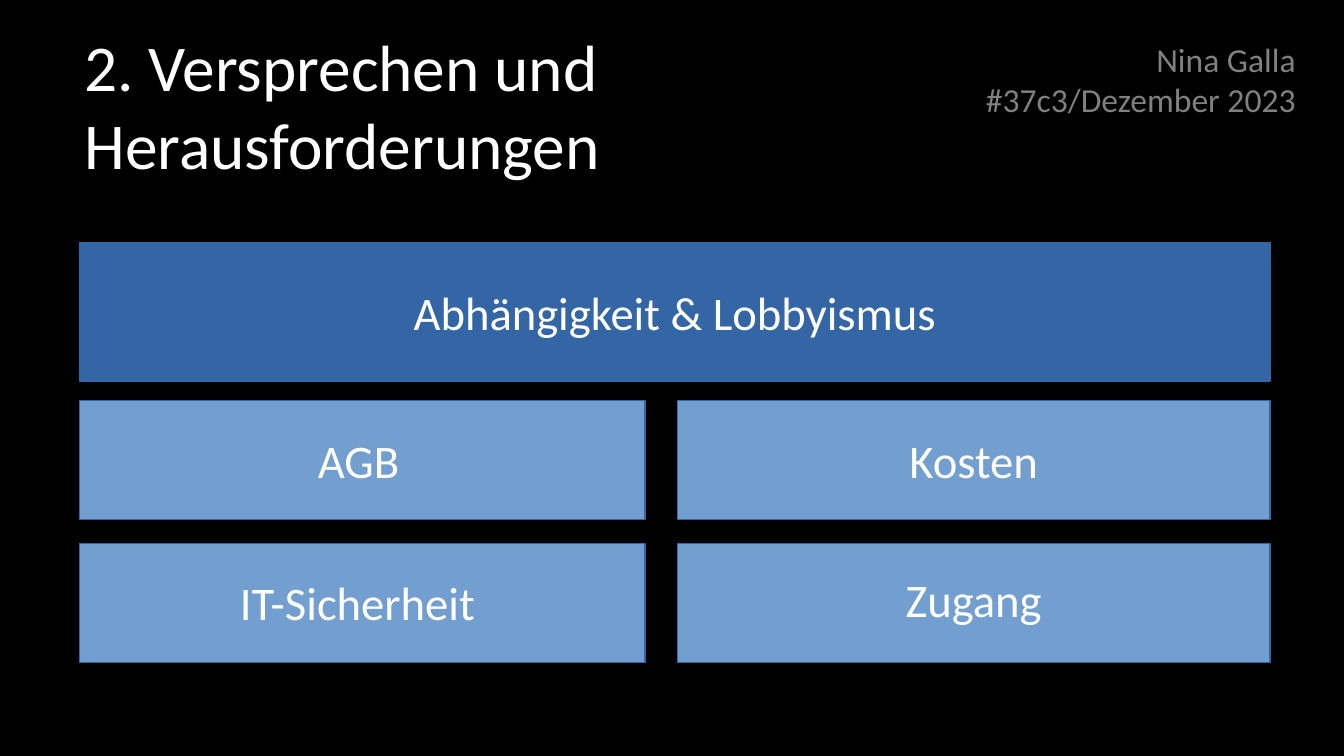
from pptx import Presentation
from pptx.dml.color import RGBColor
from pptx.enum.shapes import MSO_SHAPE as Shape
from pptx.enum.text import MSO_ANCHOR as Anchor, PP_ALIGN as Align
from pptx.util import Emu, Pt

EMU_PER_PX = 4572
FONT = "Calibri"
BLACK = RGBColor(0x00, 0x00, 0x00)
WHITE = RGBColor(0xFF, 0xFF, 0xFF)
GRAY = RGBColor(0x80, 0x80, 0x80)
DARK_BLUE = RGBColor(0x34, 0x65, 0xA4)
LIGHT_BLUE = RGBColor(0x72, 0x9F, 0xCF)

LEFT_COLUMN = (118, 842)
RIGHT_COLUMN = (1008, 882)
ROW_TOPS = (596, 809)
ROW_HEIGHT = 177
LABELS = (
    ("AGB", (162, 633, 743, 206)),
    ("Kosten", (1016, 633, 866, 78)),
    ("IT-Sicherheit", (118, 844, 827, 142)),
    ("Zugang", (1016, 839, 866, 78)),
)


def px(value):
    return Emu(value * EMU_PER_PX)


def write_text(shape, text, size=25, color=WHITE, align=Align.CENTER, anchor=Anchor.TOP):
    frame = shape.text_frame
    frame.word_wrap = True
    frame.vertical_anchor = anchor
    frame.text = text
    for paragraph in frame.paragraphs:
        paragraph.alignment = align
        for run in paragraph.runs:
            run.font.name = FONT
            run.font.size = Pt(size)
            run.font.color.rgb = color


def add_text(slide, box, text, **text_format):
    shape = slide.shapes.add_textbox(*map(px, box))
    write_text(shape, text, **text_format)


def add_panel(slide, box, fill):
    shape = slide.shapes.add_shape(Shape.RECTANGLE, *map(px, box))
    shape.shadow.inherit = False
    shape.fill.solid()
    shape.fill.fore_color.rgb = fill
    shape.line.color.rgb = DARK_BLUE
    shape.line.width = Pt(0)
    return shape


def main():
    presentation = Presentation()
    presentation.slide_width = px(2000)
    presentation.slide_height = px(1125)
    slide = presentation.slides.add_slide(presentation.slide_layouts[6])
    slide.background.fill.solid()
    slide.background.fill.fore_color.rgb = BLACK

    add_text(slide, (106, 35, 1754, 240), "2. Versprechen und\vHerausforderungen",
             size=35, align=Align.LEFT, anchor=Anchor.MIDDLE)
    add_text(slide, (948, 48, 1000, 104), "Nina Galla\n#37c3/Dezember 2023",
             size=18, color=GRAY, align=Align.RIGHT)

    banner = add_panel(slide, (118, 361, 1772, 206), DARK_BLUE)
    write_text(banner, "Abhängigkeit & Lobbyismus", anchor=Anchor.MIDDLE)

    for top in ROW_TOPS:
        for left, width in (LEFT_COLUMN, RIGHT_COLUMN):
            add_panel(slide, (left, top, width, ROW_HEIGHT), LIGHT_BLUE)
    for label, box in LABELS:
        add_text(slide, box, label)

    presentation.save("out.pptx")


if __name__ == "__main__":
    main()
